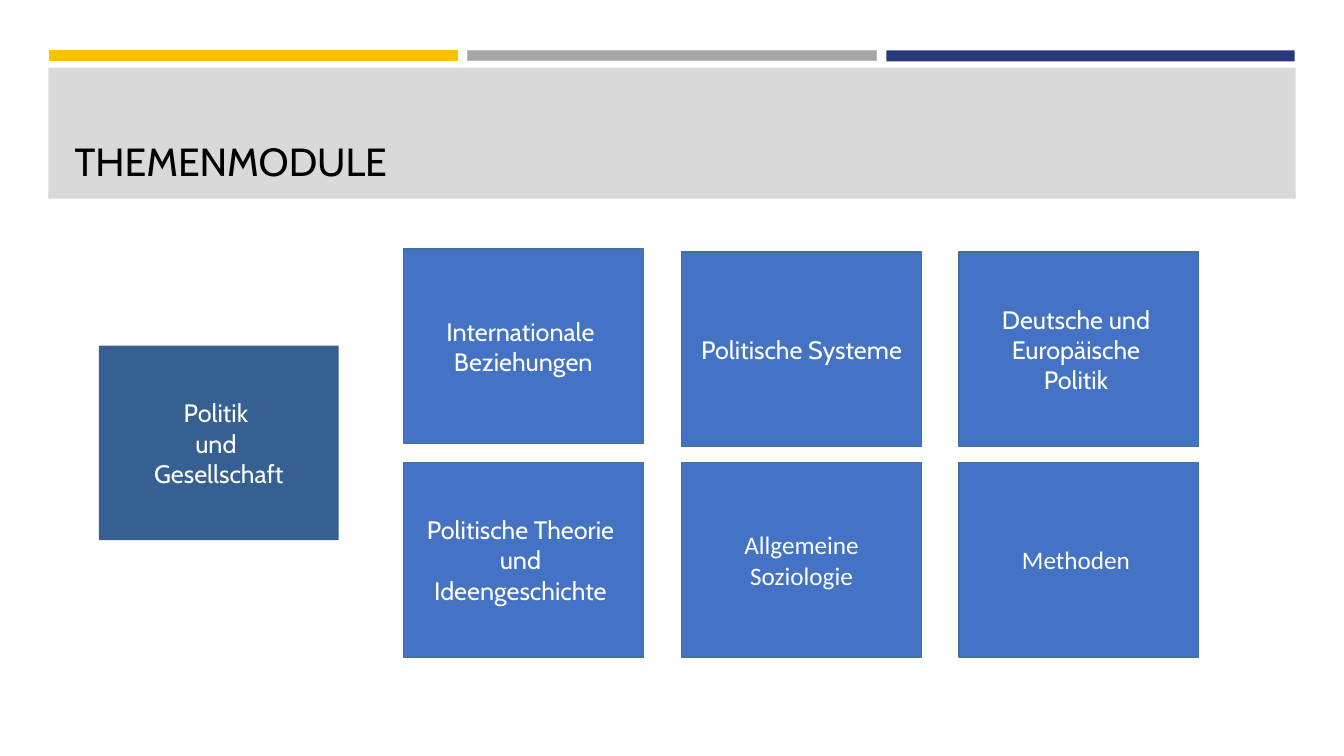
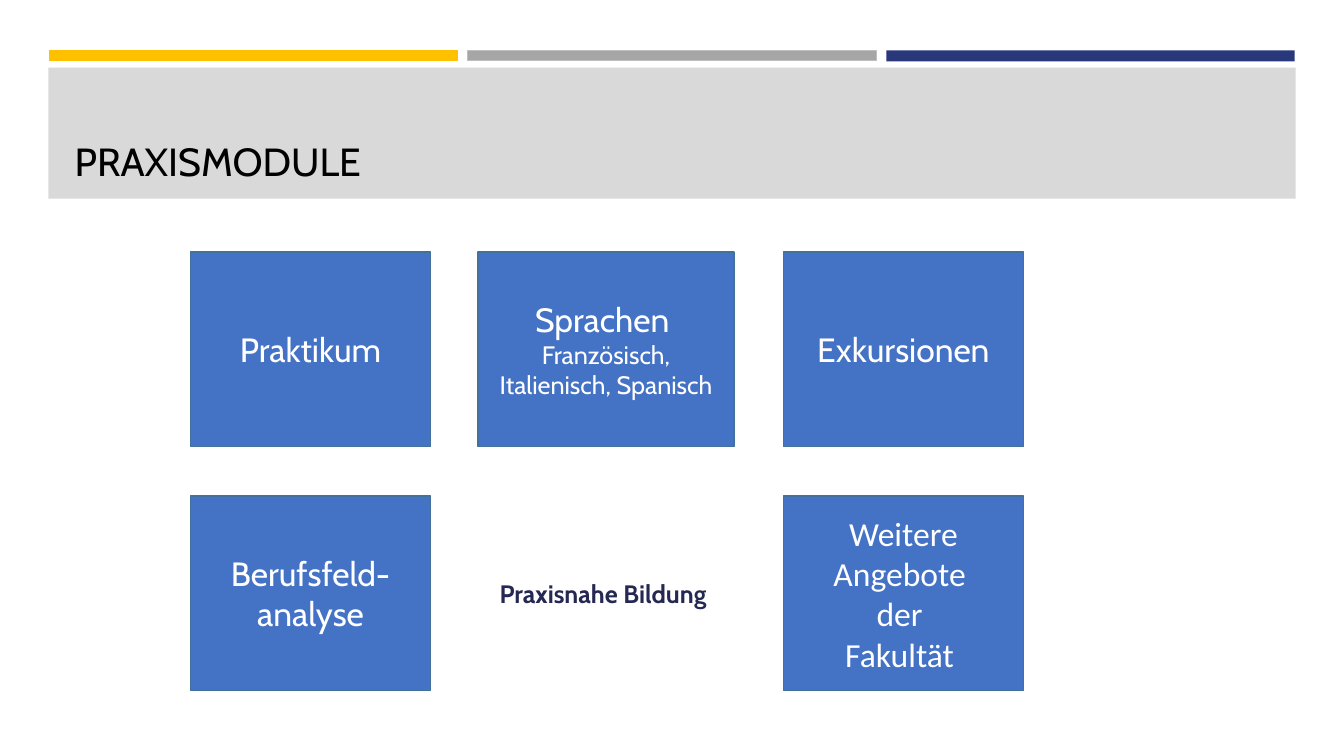
import dataclasses

import pptx
import pptx.dml.color
import pptx.enum.shapes
import pptx.enum.text
import pptx.util

PX = 9144
COLORS = {
    "band": "D9D9D9",
    "gold": "FFC000",
    "gray": "A6A6A6",
    "gray_edge": "BFBFBF",
    "navy": "28387A",
    "core": "376092",
    "module": "4472C4",
    "module_edge": "41719C",
    "claim": "242852",
    "white": "FFFFFF",
    "black": "000000",
}
ALIGN = pptx.enum.text.PP_ALIGN
ANCHOR = pptx.enum.text.MSO_ANCHOR
BOX_WIDTH, BOX_HEIGHT = 238, 193
TOP_ROW = 250
THEME_ROW, PRACTICE_ROW = 459, 492
THEME_COLUMNS = (400, 676, 951)
PRACTICE_COLUMNS = (189, 474, 777)
FIRST_BAND_ID = 100


@dataclasses.dataclass(frozen=True)
class Band:
    left: int
    top: int
    width: int
    height: int
    fill: str
    line: str | None = None


@dataclasses.dataclass(frozen=True)
class Box:
    left: int
    top: int
    lines: tuple[str, ...]
    width: int = BOX_WIDTH
    size: int = 18
    detail_size: int | None = None
    font: str = "Cabin"
    color: str = "white"
    bold: bool = False
    fill: str | None = "module"
    line: str | None = "module_edge"


@dataclasses.dataclass(frozen=True)
class Page:
    title: str
    boxes: tuple[Box, ...]


BANDS = (
    Band(48, 67, 1237, 130, "band"),
    Band(49, 50, 405, 10, "gold", "gold"),
    Band(879, 50, 405, 11, "navy"),
    Band(464, 50, 405, 10, "gray", "gray_edge"),
)

PAGES = (
    Page("THEMENMODULE", (
        Box(98, 343, ("Politik ", "und ", "Gesellschaft"), fill="core", line=None),
        Box(THEME_COLUMNS[0], 247, ("Internationale ", "Beziehungen")),
        Box(THEME_COLUMNS[1], TOP_ROW, ("Politische Systeme",)),
        Box(THEME_COLUMNS[2], TOP_ROW, ("Deutsche und ", "Europäische ", "Politik ")),
        Box(THEME_COLUMNS[0], THEME_ROW, ("Politische Theorie ", "und ", "Ideengeschichte ")),
        Box(THEME_COLUMNS[1], THEME_ROW, ("Allgemeine Soziologie",), font="Calibri"),
        Box(THEME_COLUMNS[2], THEME_ROW, ("Methoden ",), font="Calibri"),
    )),
    Page("PRAXISMODULE", (
        Box(PRACTICE_COLUMNS[0], TOP_ROW, ("Praktikum",), size=24),
        Box(PRACTICE_COLUMNS[1], TOP_ROW, ("Sprachen ", "Französisch, Italienisch, Spanisch"),
            width=254, size=24, detail_size=18),
        Box(PRACTICE_COLUMNS[2], TOP_ROW, ("Exkursionen",), size=24),
        Box(PRACTICE_COLUMNS[0], PRACTICE_ROW, ("Berufsfeld-", "analyse"), size=24),
        Box(426, PRACTICE_ROW, ("Praxisnahe Bildung ",), width=350, color="claim",
            bold=True, fill=None, line=None),
        Box(PRACTICE_COLUMNS[2], PRACTICE_ROW, ("Weitere Angebote ", "der ", "Fakultät "),
            size=24, font="Calibri"),
    )),
)


def px(length: int) -> pptx.util.Emu:
    return pptx.util.Emu(length * PX)


def rgb(name: str) -> pptx.dml.color.RGBColor:
    return pptx.dml.color.RGBColor.from_string(COLORS[name])


def write_text(frame, lines: tuple[str, ...], *, size: int, color: str,
               font: str = "Cabin", bold: bool = False, align=ALIGN.CENTER,
               anchor=ANCHOR.MIDDLE, detail_size: int | None = None) -> None:
    frame.word_wrap = True
    frame.auto_size = pptx.enum.text.MSO_AUTO_SIZE.NONE
    frame.vertical_anchor = anchor
    for index, line in enumerate(lines):
        paragraph = frame.add_paragraph() if index else frame.paragraphs[0]
        paragraph.alignment = align
        run = paragraph.add_run()
        run.text = line
        run.font.name = font
        run.font.size = pptx.util.Pt(detail_size if index and detail_size else size)
        run.font.bold = bold
        run.font.color.rgb = rgb(color)


def add_rectangle(slide, left: int, top: int, width: int, height: int,
                  fill: str, line: str | None, line_width: float):
    shape = slide.shapes.add_shape(
        pptx.enum.shapes.MSO_SHAPE.RECTANGLE, px(left), px(top), px(width), px(height))
    shape.shadow.inherit = False
    shape.fill.solid()
    shape.fill.fore_color.rgb = rgb(fill)
    if line:
        shape.line.color.rgb = rgb(line)
        shape.line.width = pptx.util.Pt(line_width)
    else:
        shape.line.fill.background()
    return shape


def add_box(slide, box: Box) -> None:
    if box.fill:
        shape = add_rectangle(slide, box.left, box.top, box.width, BOX_HEIGHT,
                              box.fill, box.line, 1)
    else:
        shape = slide.shapes.add_textbox(
            px(box.left), px(box.top), px(box.width), px(BOX_HEIGHT))
    write_text(shape.text_frame, box.lines, size=box.size, color=box.color,
               font=box.font, bold=box.bold, detail_size=box.detail_size)


def place_title(layout) -> None:
    title = layout.placeholders[0]
    title.left, title.top, title.width, title.height = px(64), px(77), px(1206), px(111)


def move_bands_to_layout(slide, layout) -> None:
    first_placeholder = layout.placeholders[0].element
    for shape_id, band in enumerate(BANDS, FIRST_BAND_ID):
        shape = add_rectangle(slide, band.left, band.top, band.width, band.height,
                              band.fill, band.line, 0.75)
        properties = shape.element.xpath("./p:nvSpPr/p:cNvPr")[0]
        properties.set("id", str(shape_id))
        first_placeholder.addprevious(shape.element)


def add_page(presentation, layout, page: Page):
    slide = presentation.slides.add_slide(layout)
    write_text(slide.shapes.title.text_frame, (page.title,), size=28, color="black",
               align=ALIGN.LEFT, anchor=ANCHOR.BOTTOM)
    for box in page.boxes:
        add_box(slide, box)
    return slide


def main() -> None:
    presentation = pptx.Presentation()
    presentation.slide_width, presentation.slide_height = px(1333), px(750)
    layout = presentation.slide_layouts[5]
    place_title(layout)
    slides = [add_page(presentation, layout, page) for page in PAGES]
    move_bands_to_layout(slides[0], layout)
    presentation.save("out.pptx")


if __name__ == "__main__":
    main()
